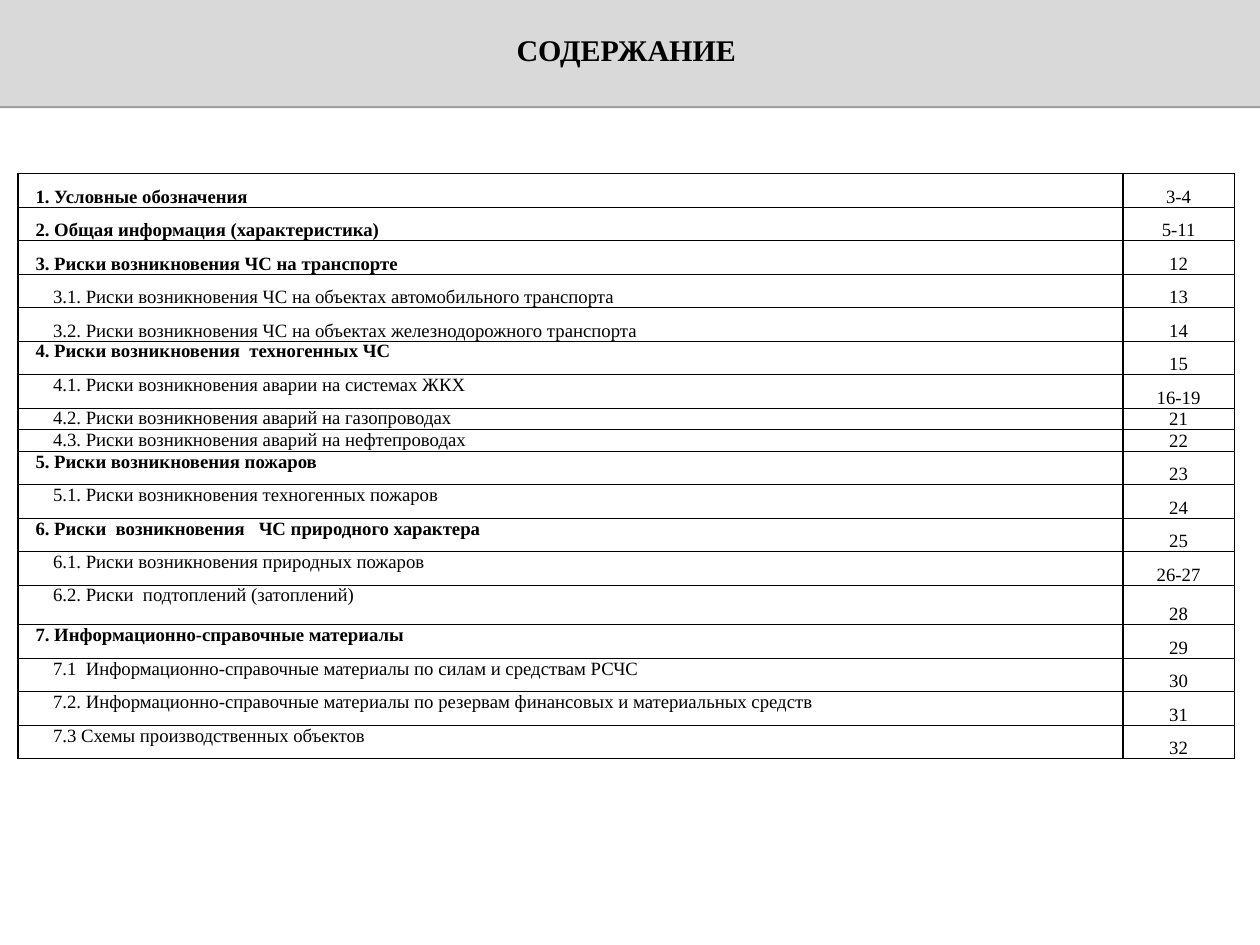
from lxml import etree
from pptx import Presentation
from pptx.dml.color import RGBColor
from pptx.enum.text import MSO_ANCHOR, MSO_AUTO_SIZE, PP_ALIGN
from pptx.oxml import parse_xml
from pptx.oxml.ns import qn
from pptx.util import Pt

LEFT, CENTER = PP_ALIGN.LEFT, PP_ALIGN.CENTER
TOP, MIDDLE, BOTTOM = MSO_ANCHOR.TOP, MSO_ANCHOR.MIDDLE, MSO_ANCHOR.BOTTOM
FONT = "Times New Roman"
SPACE = 'xmlns:a="http://schemas.openxmlformats.org/drawingml/2006/main"'

# Content: level, entry, pages
TITLE = "СОДЕРЖАНИЕ "
ITEMS = [
    (1, "1. Условные обозначения", "3-4"),
    (1, "2. Общая информация (характеристика)", "5-11"),
    (1, "3. Риски возникновения ЧС на транспорте", "12"),
    (2, "3.1. Риски возникновения ЧС на объектах автомобильного транспорта", "13"),
    (2, "3.2. Риски возникновения ЧС на объектах железнодорожного транспорта", "14"),
    (1, "4. Риски возникновения  техногенных ЧС", "15"),
    (2, "4.1. Риски возникновения аварии на системах ЖКХ", "16-19"),
    (2, "4.2. Риски возникновения аварий на газопроводах", "21"),
    (2, "4.3. Риски возникновения аварий на нефтепроводах", "22"),
    (1, "5. Риски возникновения пожаров", "23"),
    (2, "5.1. Риски возникновения техногенных пожаров", "24"),
    (1, "6. Риски  возникновения   ЧС природного характера", "25"),
    (2, "6.1. Риски возникновения природных пожаров", "26-27"),
    (2, "6.2. Риски  подтоплений (затоплений)", "28"),
    (1, "7. Информационно-справочные материалы", "29"),
    (2, "7.1  Информационно-справочные материалы по силам и средствам РСЧС", "30"),
    (2, "7.2. Информационно-справочные материалы по резервам финансовых "
        "и материальных средств", "31"),
    (2, "7.3 Схемы производственных объектов", "32"),
]

# Sizes in points
WIDTH, HEIGHT, BAND = 1008, 756, 85
X, Y, COLS = 14.4, 139, (884, 89)
ROW, INDENT = 26.8, 14
SPECIAL = {7: 17.3, 8: 17.3, 13: 31.7}   # rows of another height
LOW = 5                                  # first entries sit at the cell foot


def color(code):
    return RGBColor.from_string(code)


def paint(item, code):
    item.fill.solid()
    item.fill.fore_color.rgb = color(code)


def write(frame, text, size=15, bold=False, align=LEFT, indent=0, lines=None):
    para = frame.paragraphs[0]
    para.alignment = align
    if lines:
        para.line_spacing = lines
    if indent:
        para._p.get_or_add_pPr().set("marL", str(Pt(indent)))
    run = para.add_run()
    run.text = text
    font = run.font
    font.name, font.size, font.bold = FONT, Pt(size), bold
    font.color.rgb = color("000000")


def border(cell):
    props = cell._tc.get_or_add_tcPr()
    for side in ("lnL", "lnR", "lnT", "lnB"):
        line = etree.SubElement(props, qn("a:" + side), w=str(Pt(1)))
        fill = etree.SubElement(line, qn("a:solidFill"))
        etree.SubElement(fill, qn("a:srgbClr"), val="000000")


def add_title(slide):
    band = slide.shapes.title
    band.left, band.top, band.width, band.height = 0, 0, Pt(WIDTH), Pt(BAND)
    paint(band, "D9D9D9")
    band.line.fill.background()
    band._element.spPr.append(parse_xml(
        f'<a:effectLst {SPACE}><a:outerShdw blurRad="0" dist="{Pt(1.6)}" '
        'dir="5400000" rotWithShape="0"><a:srgbClr val="000000">'
        '<a:alpha val="38000"/></a:srgbClr></a:outerShdw></a:effectLst>'))
    frame = band.text_frame
    frame.auto_size, frame.word_wrap = MSO_AUTO_SIZE.NONE, True
    frame.vertical_anchor = MIDDLE
    write(frame, TITLE, size=24, bold=True, align=CENTER, lines=0.8)


def add_list(slide):
    tall = [SPECIAL.get(i, ROW) for i in range(len(ITEMS))]
    table = slide.shapes.add_table(len(ITEMS), len(COLS), Pt(X), Pt(Y),
                                   Pt(sum(COLS)), Pt(sum(tall))).table
    table.first_row = table.horz_banding = False
    for col, width in zip(table.columns, COLS):
        col.width = Pt(width)
    for i, (level, entry, pages) in enumerate(ITEMS):
        table.rows[i].height = Pt(tall[i])
        name, page = table.cell(i, 0), table.cell(i, 1)
        for cell in (name, page):
            cell.margin_left = cell.margin_right = 0
            cell.margin_top = cell.margin_bottom = 0
            border(cell)
            paint(cell, "FFFFFF")
        name.vertical_anchor = BOTTOM if i < LOW else TOP
        page.vertical_anchor = BOTTOM
        write(name.text_frame, entry, bold=level == 1, indent=INDENT * level)
        write(page.text_frame, pages, align=CENTER)


def main():
    deck = Presentation()
    deck.slide_width, deck.slide_height = Pt(WIDTH), Pt(HEIGHT)
    slide = deck.slides.add_slide(deck.slide_layouts[5])
    add_title(slide)
    add_list(slide)
    deck.save("out.pptx")


if __name__ == "__main__":
    main()
